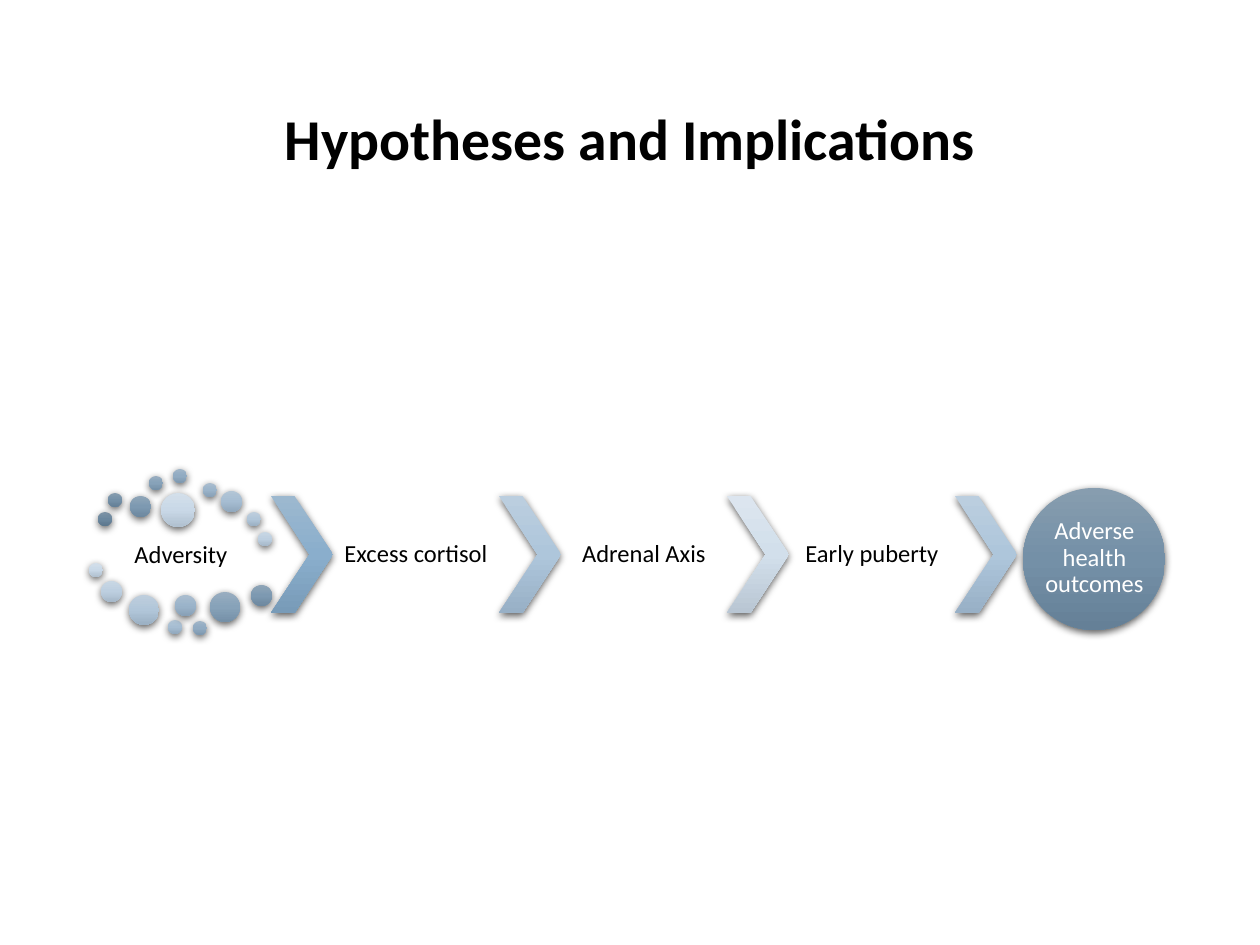
from lxml.etree import SubElement
from pptx import Presentation
from pptx.dml.color import RGBColor
from pptx.enum.shapes import MSO_SHAPE
from pptx.enum.text import MSO_ANCHOR, PP_ALIGN
from pptx.oxml import parse_xml
from pptx.oxml.ns import nsdecls, qn
from pptx.util import Emu, Pt

EMU_PER_PX = 914400 / 126
SMALL, MEDIUM, LARGE, HUGE = 14, 21, 30, 34

DOT_TONES = [
    ("8095A7", "6B879E", "5D788E"),
    ("879DAF", "7490A7", "658097"),
    ("8FA5B8", "7D99B1", "6D889F"),
    ("98ADC0", "87A2B9", "7590A7"),
    ("A0B5C8", "91ABC2", "7E98AF"),
    ("AABDCF", "9BB4CA", "88A0B6"),
    ("B3C6D6", "A6BDD2", "91A8BD"),
    ("BECEDD", "B1C6D9", "9BB0C3"),
    ("C8D7E4", "BDCFE0", "A6B8C9"),
    ("D3DFEA", "C9D8E7", "B0C0CF"),
]
UPPER_DOTS = [
    (98, 512, SMALL), (108, 493, SMALL), (130, 496, MEDIUM), (149, 476, SMALL),
    (173, 469, SMALL), (203, 483, SMALL), (221, 491, MEDIUM), (247, 512, SMALL),
    (258, 532, SMALL), (161, 493, HUGE),
]
LOWER_DOTS = [
    (89, 563, SMALL), (101, 581, MEDIUM), (129, 595, LARGE), (168, 620, SMALL),
    (175, 595, MEDIUM), (193, 621, SMALL), (210, 592, LARGE), (251, 585, MEDIUM),
]
STRONG_BLUE = ("9CB8CF", "8AAECC", "789BB8")
MID_BLUE = ("BBCEDF", "AEC6DB", "98B0C6")
PALE_BLUE = ("DCE5EF", "D2DFEB", "B9C6D3")
CHEVRON_TONES = [STRONG_BLUE, MID_BLUE, PALE_BLUE, MID_BLUE]
STEPS = ["Excess cortisol", "Adrenal Axis", "Early puberty"]
CHEVRON_LEFT, STEP_LEFT, STEP_PITCH = 271, 333, 228
ROW_TOP, ROW_HEIGHT = 496, 117


def px(length):
    """Turn pixels into EMU."""
    return Emu(round(length * EMU_PER_PX))


def color(hex_value):
    """Turn a hex string into a colour."""
    return RGBColor.from_string(hex_value)


def add_text(slide, text, left, top, width, height, size=14, bold=False,
             font_color="000000", margin=3):
    """Add a centred text box."""
    box = slide.shapes.add_textbox(px(left), px(top), px(width), px(height))
    frame = box.text_frame
    frame.word_wrap = True
    frame.vertical_anchor = MSO_ANCHOR.MIDDLE
    frame.margin_left = frame.margin_right = px(margin)
    frame.margin_top = frame.margin_bottom = px(margin)
    paragraph = frame.paragraphs[0]
    paragraph.alignment = PP_ALIGN.CENTER
    paragraph.line_spacing = 0.9
    run = paragraph.add_run()
    run.text = text
    run.font.name = "Calibri"
    run.font.size = Pt(size)
    run.font.bold = bold
    run.font.color.rgb = color(font_color)


def set_gradient(shape, tone):
    """Fill a shape with three tones from top to bottom."""
    stops = "".join(
        f'<a:gs pos="{position}"><a:srgbClr val="{hex_value}"/></a:gs>'
        for position, hex_value in zip((0, 50000, 100000), tone)
    )
    gradient = parse_xml(
        f'<a:gradFill {nsdecls("a")} rotWithShape="1"><a:gsLst>{stops}</a:gsLst>'
        '<a:lin ang="5400000" scaled="0"/></a:gradFill>'
    )
    shape._element.spPr.find(qn("a:ln")).addprevious(gradient)


def set_shadow(shape):
    """Give a shape a soft shadow below it."""
    shape.shadow.inherit = False
    effects = shape._element.spPr.find(qn("a:effectLst"))
    shadow = SubElement(effects, qn("a:outerShdw"), blurRad=str(Pt(4.5)),
                        dist=str(Pt(1.5)), dir="5400000", rotWithShape="0")
    shade = SubElement(shadow, qn("a:srgbClr"), val="000000")
    SubElement(shade, qn("a:alpha"), val="63000")


def add_gradient_shape(slide, kind, left, top, width, height, tone):
    """Add a shaded shape without an outline."""
    shape = slide.shapes.add_shape(kind, px(left), px(top), px(width), px(height))
    shape.line.fill.background()
    set_gradient(shape, tone)
    set_shadow(shape)
    return shape


def add_circle(slide, left, top, diameter, tone):
    """Add a shaded circle."""
    add_gradient_shape(slide, MSO_SHAPE.OVAL, left, top, diameter, diameter, tone)


def add_chevron(slide, left, tone):
    """Add a chevron on the process row."""
    chevron = add_gradient_shape(slide, MSO_SHAPE.CHEVRON, left, ROW_TOP, 62,
                                 ROW_HEIGHT, tone)
    chevron.adjustments[0] = 0.62


def main():
    """Build and save the slide."""
    presentation = Presentation()
    presentation.slide_width = px(1260)
    presentation.slide_height = px(945)
    slide = presentation.slides.add_slide(presentation.slide_layouts[6])

    add_text(slide, "Hypotheses and Implications", 87, 50, 1086, 183, size=33, bold=True)
    add_text(slide, "Adversity", 98, 528, 166, 55)
    for dots, tones in ((UPPER_DOTS, DOT_TONES), (LOWER_DOTS, reversed(DOT_TONES))):
        for (left, top, diameter), tone in zip(dots, tones):
            add_circle(slide, left, top, diameter, tone)

    for index, tone in enumerate(CHEVRON_TONES):
        add_chevron(slide, CHEVRON_LEFT + index * STEP_PITCH, tone)
    for index, step in enumerate(STEPS):
        add_text(slide, step, STEP_LEFT + index * STEP_PITCH, ROW_TOP, 166, ROW_HEIGHT)

    add_circle(slide, 1023, 488, 142, DOT_TONES[1])
    add_text(slide, "Adverse health outcomes", 1044, 508, 101, 101,
             font_color="FFFFFF", margin=0)
    presentation.save("out.pptx")


if __name__ == "__main__":
    main()
